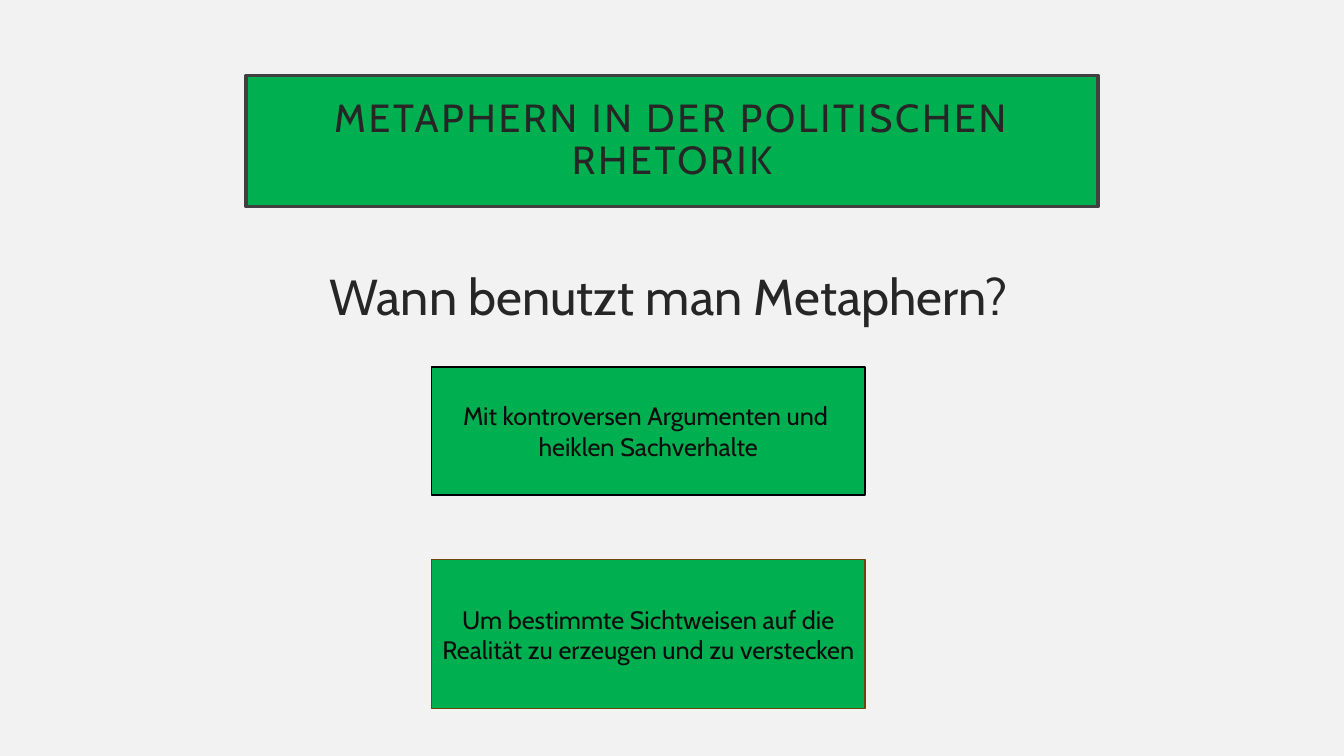
from pptx import Presentation
from pptx.dml.color import RGBColor
from pptx.enum.shapes import MSO_SHAPE
from pptx.enum.text import MSO_ANCHOR, PP_ALIGN
from pptx.util import Inches, Pt

RECT = MSO_SHAPE.RECTANGLE
MIDDLE = MSO_ANCHOR.MIDDLE
CENTER = PP_ALIGN.CENTER
LEFT = PP_ALIGN.LEFT

BACKGROUND = RGBColor(0xF2, 0xF2, 0xF2)
GREEN = RGBColor(0x00, 0xB0, 0x50)
GRAY = RGBColor(0x40, 0x40, 0x40)
DARK = RGBColor(0x26, 0x26, 0x26)
INK = RGBColor(0x0D, 0x0D, 0x0D)
BLACK = RGBColor(0x00, 0x00, 0x00)
BROWN = RGBColor(0x6C, 0x47, 0x0D)


class SlideBuilder:
    font = "Cabin"

    def __init__(self, prs):
        self.s = prs.slides.add_slide(prs.slide_layouts[6])
        fill = self.s.background.fill
        fill.solid()
        fill.fore_color.rgb = BACKGROUND

    def set_text(self, tf, lines, size, color, align):
        tf.word_wrap = True
        for i, line in enumerate(lines):
            p = tf.paragraphs[0] if i == 0 else tf.add_paragraph()
            p.add_run().text = line
            p.alignment = align
            p.font.name = self.font
            p.font.size = Pt(size)
            p.font.color.rgb = color

    def box(self, at, lines, size, color, line_color, line_width):
        sp = self.s.shapes.add_shape(RECT, *map(Inches, at))
        sp.shadow.inherit = False
        sp.fill.solid()
        sp.fill.fore_color.rgb = GREEN
        sp.line.color.rgb = line_color
        sp.line.width = Pt(line_width)
        sp.text_frame.vertical_anchor = MIDDLE
        self.set_text(sp.text_frame, lines, size, color, CENTER)
        return sp

    def title(self, at, text):
        tf = self.box(at, [text], 28, DARK, GRAY, 2.5).text_frame
        tf.margin_left = tf.margin_right = Inches(0.2)
        tf.margin_top = tf.margin_bottom = Inches(0.2)
        p = tf.paragraphs[0]
        p.line_spacing = 0.9
        p.runs[0].font._element.set("spc", "200")

    def question(self, at, text):
        tf = self.s.shapes.add_textbox(*map(Inches, at)).text_frame
        tf.margin_left = Inches(0.45)
        self.set_text(tf, [text], 36, DARK, LEFT)
        tf.paragraphs[0].space_before = Pt(10)


def main():
    prs = Presentation()
    prs.slide_width = Inches(13.33)
    prs.slide_height = Inches(7.5)
    slide = SlideBuilder(prs)
    slide.title((2.44, 0.75, 8.45, 1.3), "METAPHERN IN DER POLITISCHEN RHETORIK")
    slide.question((2.82, 2.58, 8.45, 3.39), "Wann benutzt man Metaphern?")
    answers = [
        (3.64, 1.27, BLACK, ["Mit kontroversen Argumenten und ", "heiklen Sachverhalte"]),
        (5.55, 1.48, BROWN, ["Um bestimmte Sichtweisen auf die",
                             "Realität zu erzeugen und zu verstecken"]),
    ]
    for top, height, line_color, lines in answers:
        slide.box((4.28, top, 4.3, height), lines, 18, INK, line_color, 1)
    prs.save("out.pptx")


if __name__ == "__main__":
    main()
